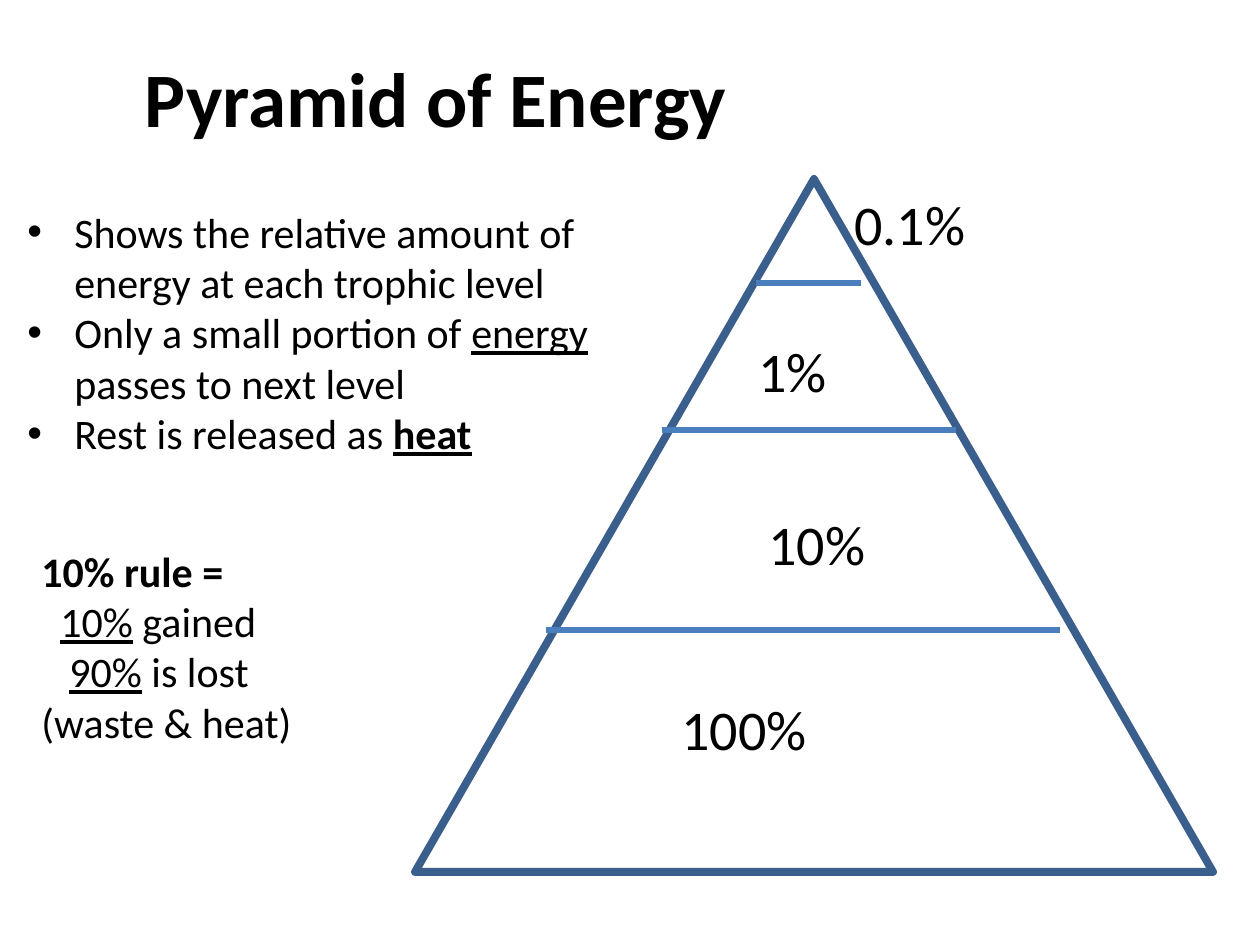
from dataclasses import dataclass

import pptx
import pptx.dml.color
import pptx.enum.shapes
import pptx.enum.text
import pptx.oxml.ns
import pptx.util
from lxml import etree

PX_PER_INCH = 126
BLACK = pptx.dml.color.RGBColor(0x00, 0x00, 0x00)
OUTLINE = pptx.dml.color.RGBColor(0x3A, 0x5F, 0x8C)
DIVIDER = pptx.dml.color.RGBColor(0x4B, 0x7E, 0xBC)
ALIGN = pptx.enum.text.PP_ALIGN
ANCHOR = pptx.enum.text.MSO_ANCHOR


@dataclass
class Run:
    text: str
    bold: bool = False
    underline: bool = False


@dataclass
class Line:
    runs: list[Run]
    indent: int = 0
    bullet: bool = False


@dataclass
class Divider:
    left: int
    right: int
    y: int


@dataclass
class Level:
    share: str
    left: int
    top: int
    width: int
    wrap: bool = True


def px(length: int) -> int:
    return round(length * pptx.util.Inches(1) / PX_PER_INCH)


def add_text(slide, lines: list[Line], *, left: int, top: int, width: int,
             height: int, size: int, align=ALIGN.LEFT, anchor=ANCHOR.TOP,
             wrap: bool = True) -> None:
    box = slide.shapes.add_textbox(px(left), px(top), px(width), px(height))
    frame = box.text_frame
    frame.word_wrap = wrap
    frame.vertical_anchor = anchor
    for number, line in enumerate(lines):
        paragraph = frame.paragraphs[0] if number == 0 else frame.add_paragraph()
        paragraph.alignment = align
        properties = paragraph._p.get_or_add_pPr()
        if line.indent:
            properties.set("marL", str(px(line.indent)))
        if line.bullet:
            properties.set("indent", str(-px(line.indent)))
            font = etree.SubElement(properties, pptx.oxml.ns.qn("a:buFont"))
            font.set("typeface", "Arial")
            mark = etree.SubElement(properties, pptx.oxml.ns.qn("a:buChar"))
            mark.set("char", "•")
        for part in line.runs:
            run = paragraph.add_run()
            run.text = part.text
            run.font.name = "Calibri"
            run.font.size = pptx.util.Pt(size)
            run.font.color.rgb = BLACK
            run.font.bold = part.bold
            run.font.underline = part.underline


def add_divider(slide, divider: Divider) -> None:
    rule = slide.shapes.add_connector(
        pptx.enum.shapes.MSO_CONNECTOR.STRAIGHT,
        px(divider.left), px(divider.y), px(divider.right), px(divider.y))
    rule.line.color.rgb = DIVIDER
    rule.line.width = pptx.util.Pt(3)
    etree.SubElement(rule._element.spPr, pptx.oxml.ns.qn("a:effectLst"))


def add_pyramid(slide, left: int, top: int, width: int, height: int) -> None:
    pyramid = slide.shapes.add_shape(
        pptx.enum.shapes.MSO_SHAPE.ISOSCELES_TRIANGLE,
        px(left), px(top), px(width), px(height))
    pyramid.shadow.inherit = False
    pyramid.fill.background()
    pyramid.line.color.rgb = OUTLINE
    pyramid.line.width = pptx.util.Pt(4.5)


FACTS = [
    Line([Run("Shows the relative amount of energy at each trophic level")], 47, True),
    Line([Run("Only a small portion of "), Run("energy", underline=True),
          Run(" passes to next level")], 47, True),
    Line([Run("Rest is released as "), Run("heat", bold=True, underline=True)], 47, True),
]
TEN_PERCENT_RULE = [
    Line([Run("10% rule =", bold=True)]),
    Line([Run("10%", underline=True), Run(" gained")], 19),
    Line([Run("90%", underline=True), Run(" is lost")], 28),
    Line([Run("(waste & heat)")]),
]
DIVIDERS = [Divider(546, 1060, 630), Divider(756, 861, 283), Divider(662, 956, 430)]
LEVELS = [
    Level("100%", 669, 688, 152, wrap=False),
    Level("10%", 756, 503, 168),
    Level("1%", 746, 330, 116),
    Level("0.1%", 842, 183, 137, wrap=False),
]


def main() -> None:
    deck = pptx.Presentation()
    deck.slide_width = pptx.util.Inches(10)
    deck.slide_height = pptx.util.Inches(7.5)
    slide = deck.slides.add_slide(deck.slide_layouts[6])

    # Title
    add_text(slide, [Line([Run("Pyramid of Energy", bold=True)])],
             left=14, top=18, width=844, height=157, size=44,
             align=ALIGN.CENTER, anchor=ANCHOR.MIDDLE)

    # Pyramid and its level boundaries
    add_pyramid(slide, 415, 179, 798, 693)
    for divider in DIVIDERS:
        add_divider(slide, divider)

    # Explanations
    add_text(slide, FACTS, left=15, top=200, width=592, height=267, size=24)
    add_text(slide, TEN_PERCENT_RULE, left=29, top=539, width=352, height=217, size=24)

    # Energy share of each level
    for level in LEVELS:
        add_text(slide, [Line([Run(level.share)])], left=level.left, top=level.top,
                 width=level.width, height=81, size=32, wrap=level.wrap)

    deck.save("out.pptx")


if __name__ == "__main__":
    main()
